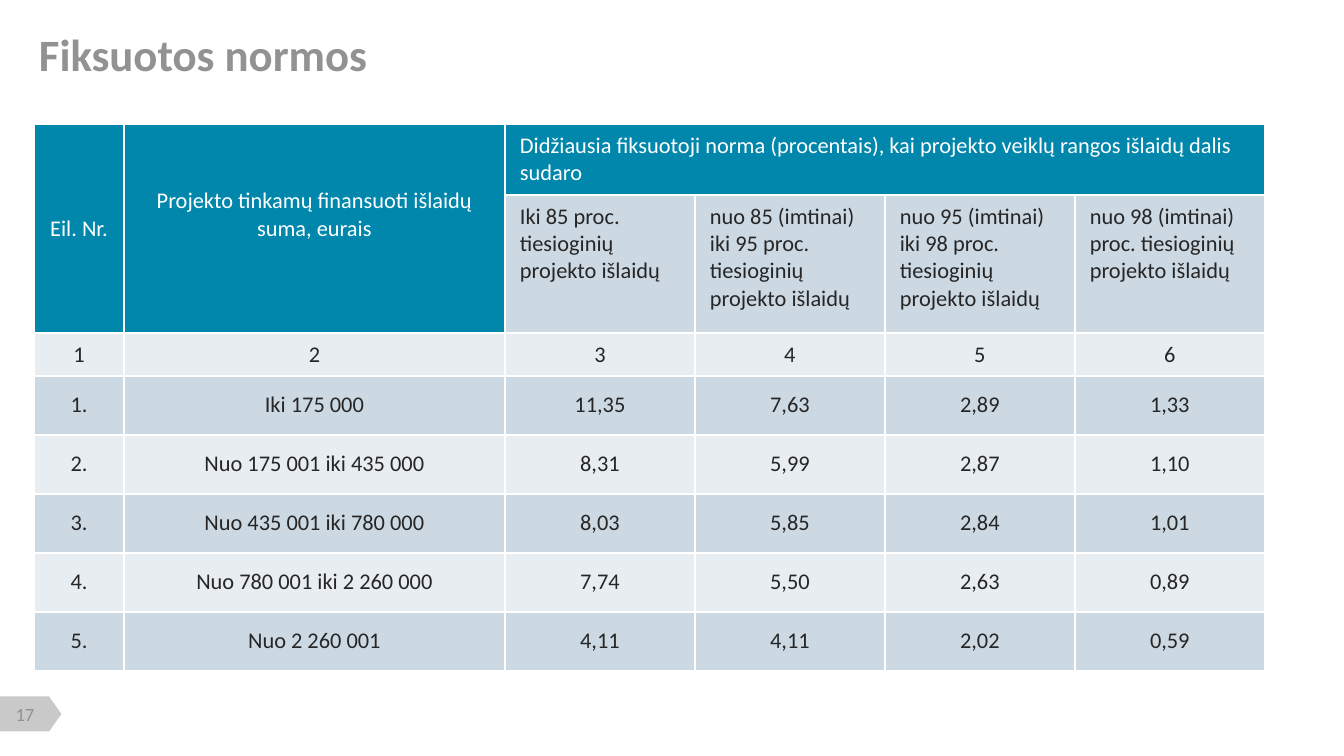
"""Build the slide of fixed rates by project cost."""
from typing import NamedTuple

from lxml import etree
from pptx import Presentation
from pptx import util as u
from pptx.dml.color import RGBColor
from pptx.enum import shapes, text
from pptx.oxml import ns

SCALE = 914400 / 134.4
FONT = "Calibri"
WHITE = RGBColor(0xFF, 0xFF, 0xFF)
TEAL = RGBColor(0x01, 0x87, 0xAC)
DARK = RGBColor(0x26, 0x26, 0x26)
GREY = RGBColor(0x92, 0x92, 0x92)
SILVER = RGBColor(0xC9, 0xC9, 0xC9)
BLUE = RGBColor(0xCC, 0xD9, 0xE3)
PALE = RGBColor(0xE7, 0xED, 0xF1)
LEFT, MID = text.PP_ALIGN.LEFT, text.PP_ALIGN.CENTER
TOP, CENTER = text.MSO_ANCHOR.TOP, text.MSO_ANCHOR.MIDDLE


class Box(NamedTuple):
    x: int
    y: int
    w: int
    h: int


class Style(NamedTuple):
    size: int
    color: RGBColor
    align: text.PP_ALIGN = MID
    anchor: text.MSO_ANCHOR = CENTER
    bold: bool = False


class Look(NamedTuple):
    fill: RGBColor
    style: Style


HEAD = Look(TEAL, Style(12, WHITE))
SPAN = Look(TEAL, Style(12, WHITE, LEFT))
SUB = Look(BLUE, Style(12, DARK, LEFT, TOP))
BODY = [Look(PALE, Style(12, DARK)), Look(BLUE, Style(12, DARK))]

COLS = [90, 381] + [190] * 4
ROWS = [71, 138, 42] + [59] * 5
HEADS = [
    ("Eil. Nr.", HEAD),
    ("Projekto tinkamų finansuoti išlaidų suma, eurais", HEAD),
    ("Didžiausia fiksuotoji norma (procentais), kai projekto veiklų "
     "rangos išlaidų dalis sudaro", SPAN),
]
SUBS = [
    "Iki 85 proc. tiesioginių projekto išlaidų",
    "nuo 85 (imtinai) iki 95 proc. tiesioginių projekto išlaidų",
    "nuo 95 (imtinai) iki 98 proc. tiesioginių projekto išlaidų",
    "nuo 98 (imtinai) proc. tiesioginių projekto išlaidų",
]
RATES = [
    ("1", "2", "3", "4", "5", "6"),
    ("1.", "Iki 175 000", "11,35", "7,63", "2,89", "1,33"),
    ("2.", "Nuo 175 001 iki 435 000", "8,31", "5,99", "2,87", "1,10"),
    ("3.", "Nuo 435 001 iki 780 000", "8,03", "5,85", "2,84", "1,01"),
    ("4.", "Nuo 780 001 iki 2 260 000", "7,74", "5,50", "2,63", "0,89"),
    ("5.", "Nuo 2 260 001", "4,11", "4,11", "2,02", "0,59"),
]


def px(n: int) -> u.Emu:
    """Turn pixels into EMU."""
    return u.Emu(round(n * SCALE))


def place(box: Box) -> list[u.Emu]:
    """Turn a box into EMU lengths."""
    return [px(n) for n in box]


def inset(item, side: int, edge: int) -> None:
    """Set the margins of a cell or text frame."""
    item.margin_left = item.margin_right = px(side)
    item.margin_top = item.margin_bottom = px(edge)


def write(frame, words: str, style: Style) -> None:
    """Write one styled paragraph."""
    para = frame.paragraphs[0]
    para.text = words
    para.alignment = style.align
    para.font.name = FONT
    para.font.size = u.Pt(style.size)
    para.font.bold = style.bold
    para.font.color.rgb = style.color


def label(slide, box: Box, words: str, style: Style, edge: int) -> None:
    """Add a text box."""
    frame = slide.shapes.add_textbox(*place(box)).text_frame
    frame.word_wrap = True
    frame.vertical_anchor = style.anchor
    inset(frame, 0, edge)
    write(frame, words, style)


def edges(cell) -> None:
    """Draw white borders round a cell."""
    props = cell._tc.get_or_add_tcPr()
    for tag in ("a:lnL", "a:lnR", "a:lnT", "a:lnB"):
        line = etree.SubElement(props, ns.qn(tag), w=str(u.Pt(1)))
        fill = etree.SubElement(line, ns.qn("a:solidFill"))
        etree.SubElement(fill, ns.qn("a:srgbClr"), val=str(WHITE))


def dress(cell, look: Look, words: str = "") -> None:
    """Style and fill in a cell."""
    edges(cell)
    cell.fill.solid()
    cell.fill.fore_color.rgb = look.fill
    cell.vertical_anchor = look.style.anchor
    inset(cell, 15, 8)
    write(cell.text_frame, words, look.style)


def grid(slide, x: int, y: int) -> None:
    """Add the table of rates."""
    box = Box(x, y, sum(COLS), sum(ROWS))
    table = slide.shapes.add_table(len(ROWS), len(COLS), *place(box)).table
    for col, width in zip(table.columns, COLS):
        col.width = px(width)
    for row, height in zip(table.rows, ROWS):
        row.height = px(height)
    for c in range(2):
        table.cell(0, c).merge(table.cell(1, c))
        dress(table.cell(1, c), HEAD)
    table.cell(0, 2).merge(table.cell(0, 5))
    for c in range(3, 6):
        dress(table.cell(0, c), SPAN)
    for c, (words, look) in enumerate(HEADS):
        dress(table.cell(0, c), look, words)
    table.cell(0, 1).margin_bottom = px(35)
    for c, words in enumerate(SUBS, 2):
        dress(table.cell(1, c), SUB, words)
    for r, rates in enumerate(RATES):
        for c, words in enumerate(rates):
            dress(table.cell(r + 2, c), BODY[r % 2], words)


def badge(slide, box: Box) -> None:
    """Add the page marker, pointing right."""
    kind = shapes.MSO_SHAPE.FLOWCHART_OFFPAGE_CONNECTOR
    mark = slide.shapes.add_shape(kind, *place(box))
    mark.rotation = 270
    mark.shadow.inherit = False
    mark.fill.solid()
    mark.fill.fore_color.rgb = SILVER
    mark.line.fill.background()


def main() -> None:
    """Build and save the deck."""
    deck = Presentation()
    deck.slide_width, deck.slide_height = px(1344), px(756)
    slide = deck.slides.add_slide(deck.slide_layouts[6])
    badge(slide, Box(13, 683, 35, 62))
    label(slide, Box(3, 703, 44, 23), "17", Style(10, GREY), 0)
    grid(slide, 34, 124)
    title = Style(24, GREY, LEFT, TOP, True)
    label(slide, Box(39, 20, 1247, 52), "Fiksuotos normos", title, 7)
    deck.save("out.pptx")


if __name__ == "__main__":
    main()
